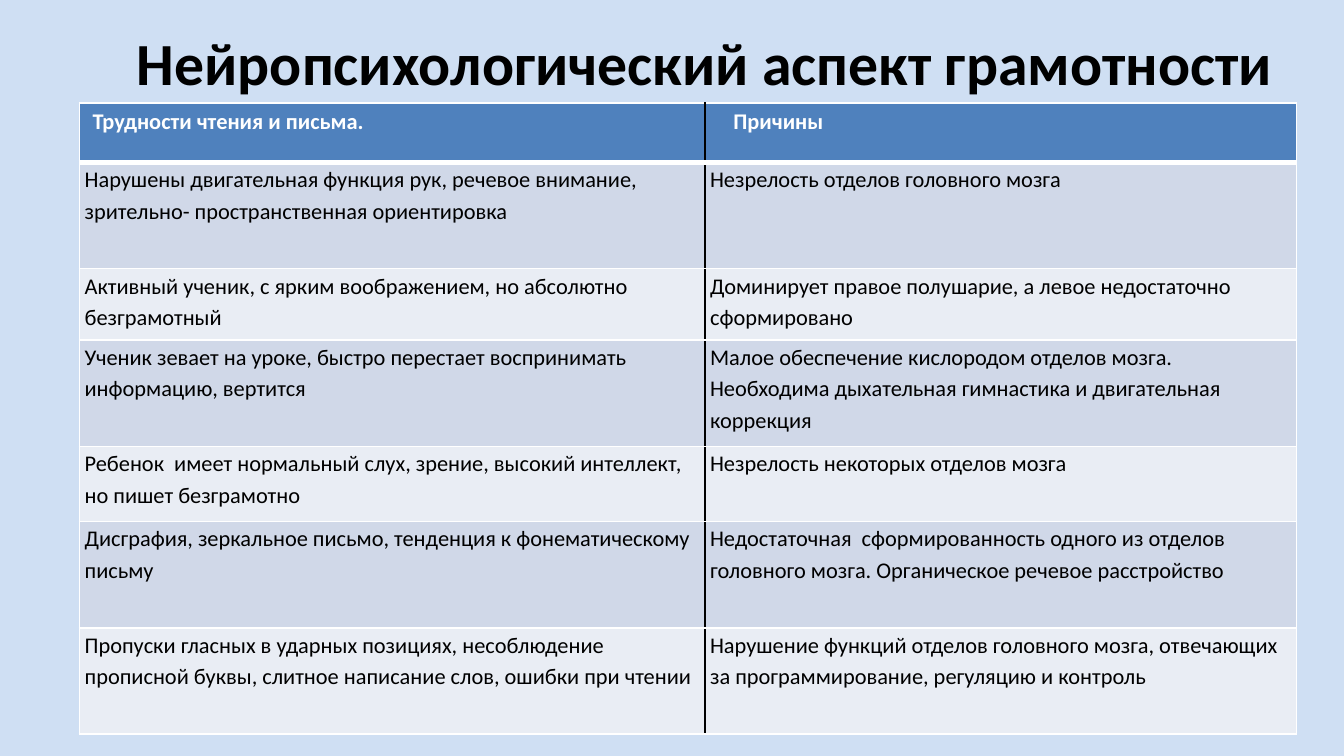
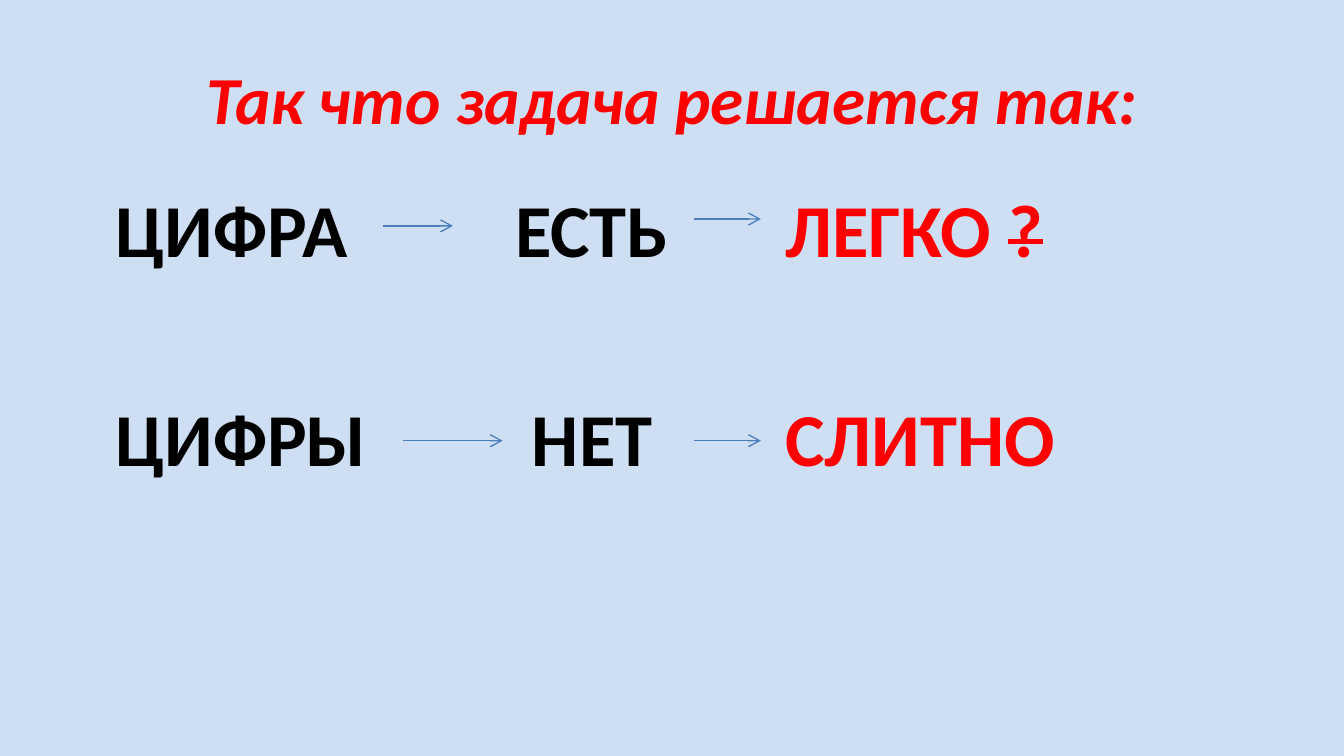
import dataclasses

import lxml.etree
import pptx
import pptx.dml.color
import pptx.enum.shapes
import pptx.enum.text
import pptx.oxml
import pptx.oxml.ns
import pptx.util

Cm, Pt = pptx.util.Cm, pptx.util.Pt
RGB = pptx.dml.color.RGBColor.from_string
qn = pptx.oxml.ns.qn


@dataclasses.dataclass(frozen=True)
class Theme:
    font: str = "Calibri"
    back: str = "CFDFF3"
    ink: str = "000000"
    light: str = "FFFFFF"
    accent: str = "FF0000"
    header: str = "4F81BD"
    bands: tuple = ("D0D8E8", "E9EDF4")
    arrow: str = "4B7EBC"
    title_size: int = 32
    answer_size: int = 36
    scheme_size: int = 40
    table_size: int = 12


theme = Theme()


def add_run(p, text, size, color, **formats):
    r = p.add_run()
    r.text = text
    r.font.color.rgb = RGB(color)
    for name, value in {"name": theme.font, "size": Pt(size), **formats}.items():
        setattr(r.font, name, value)
    return r


def place(sp, left, top, width, height, **frame):
    box = {"left": left, "top": top, "width": width, "height": height}
    for name, value in box.items():
        setattr(sp, name, Cm(value))
    tf = sp.text_frame
    formats = {"word_wrap": True, "auto_size": pptx.enum.text.MSO_AUTO_SIZE.NONE,
               **frame}
    for name, value in formats.items():
        setattr(tf, name, value)
    return tf


prs = pptx.Presentation()
prs.slide_width, prs.slide_height = Cm(25.4), Cm(14.29)
middle = pptx.enum.text.MSO_ANCHOR.MIDDLE
left_align = pptx.enum.text.PP_ALIGN.LEFT
center = pptx.enum.text.PP_ALIGN.CENTER

# Shared background
fill = prs.slide_master.background.fill
fill.solid()
fill.fore_color.rgb = RGB(theme.back)

# Slide 1: title
s = prs.slides.add_slide(prs.slide_layouts[5])
tf = place(s.shapes.title, 1.9, 0.27, 22.86, 1.8, vertical_anchor=middle)
p = tf.paragraphs[0]
p.alignment = center
add_run(p, "Нейропсихологический аспект грамотности", theme.title_size, theme.ink,
        bold=True)

# Slide 1: table of difficulties and causes
rows = [
    (1.12, "Трудности чтения и письма.", "Причины"),
    (2.01, "Нарушены двигательная функция рук, речевое внимание, "
           "зрительно- пространственная ориентировка",
     "Незрелость отделов головного мозга"),
    (1.35, "Активный ученик, с ярким воображением, но абсолютно безграмотный",
     "Доминирует правое полушарие, а левое недостаточно сформировано"),
    (2.01, "Ученик зевает на уроке, быстро перестает воспринимать "
           "информацию, вертится",
     "Малое обеспечение кислородом отделов мозга. Необходима "
     "дыхательная гимнастика и двигательная коррекция"),
    (1.42, "Ребенок  имеет нормальный слух, зрение, высокий интеллект, "
           "но пишет безграмотно",
     "Незрелость некоторых отделов мозга"),
    (2.01, "Дисграфия, зеркальное письмо, тенденция к фонематическому письму",
     "Недостаточная  сформированность одного из отделов головного мозга. "
     "Органическое речевое расстройство"),
    (2.01, "Пропуски гласных в ударных позициях, несоблюдение прописной "
           "буквы, слитное написание слов, ошибки при чтении",
     "Нарушение функций отделов головного мозга, отвечающих за "
     "программирование, регуляцию и контроль"),
]
widths = [11.82, 11.18]
table = s.shapes.add_table(len(rows), len(widths), Cm(1.5), Cm(1.95),
                           Cm(sum(widths)), Cm(sum(row[0] for row in rows))).table
table.first_row = table.horz_banding = False
for column, width in zip(table.columns, widths):
    column.width = Cm(width)

for i, (height, *texts) in enumerate(rows):
    table.rows[i].height = Cm(height)
    head = i == 0
    for j, text in enumerate(texts):
        cell = table.cell(i, j)
        side, edge = (0.25, 0.1) if head else (0.1, 0)
        margins = {"left": 0.54 if head and j else side, "right": side,
                   "top": edge, "bottom": edge}
        for name, value in margins.items():
            setattr(cell, "margin_" + name, Cm(value))

        # Black divider between the columns, thick rule under the header
        borders = {"lnL": (theme.ink if j else theme.light, 1),
                   "lnR": (theme.light if j else theme.ink, 1),
                   "lnT": (theme.light, 3 if i == 1 else 1),
                   "lnB": (theme.light, 3 if head else 1)}
        tcPr = cell._tc.get_or_add_tcPr()
        for tag, (color, weight) in borders.items():
            ln = lxml.etree.SubElement(tcPr, qn("a:" + tag), w=str(Pt(weight)))
            solid = lxml.etree.SubElement(ln, qn("a:solidFill"))
            lxml.etree.SubElement(solid, qn("a:srgbClr"), val=color)
        cell.fill.solid()
        cell.fill.fore_color.rgb = RGB(theme.header if head else theme.bands[(i - 1) % 2])

        p = cell.text_frame.paragraphs[0]
        if not head:
            p.line_spacing = 1.15
        add_run(p, text, theme.table_size, theme.light if head else theme.ink, bold=head)

# Slide 2: title
s = prs.slides.add_slide(prs.slide_layouts[1])
tf = place(s.shapes.title, 1.27, 0.58, 22.86, 2.39, vertical_anchor=middle,
           margin_top=Cm(0.27))
p = tf.paragraphs[0]
p.alignment = center
add_run(p, "Так что задача решается так:", theme.answer_size, theme.accent,
        bold=True, italic=True)

# Slide 2: condition, state and answer columns
body = s.placeholders[1]
state, answer = [s.shapes.add_textbox(0, 0, 0, 0) for _ in range(2)]
columns = [
    (body, 1.93, 5.6, left_align, theme.ink, ["ЦИФРА", "ЦИФРЫ"]),
    (state, 9.39, 3.6, center, theme.ink, ["ЕСТЬ", "НЕТ"]),
    (answer, 14.59, 9.54, left_align, theme.accent, ["ЛЕГКО ", "СЛИТНО"]),
]
for sp, left, width, align, color, words in columns:
    tf = place(sp, left, 3.33, width, 9.42)
    for i, word in enumerate(words):
        p = tf.add_paragraph() if i else tf.paragraphs[0]
        p.alignment = align
        p.space_before = Pt(64 if i else 0)
        pPr = p._p.get_or_add_pPr()
        for name in ("marL", "indent"):
            pPr.set(name, "0")
        lxml.etree.SubElement(pPr, qn("a:buNone"))
        add_run(p, word, theme.scheme_size, color, bold=True)

# Struck question mark after the first answer
r = add_run(answer.text_frame.paragraphs[0], "?", theme.scheme_size, theme.accent,
            bold=True)
r._r.get_or_add_rPr().set("strike", "sngStrike")

# Slide 2: arrows between the words
arrows = [(7.24, 8.56, 4.27), (13.11, 14.38, 4.14),
          (7.62, 9.5, 8.33), (13.11, 14.38, 8.33)]
for start, end, y in arrows:
    sp = s.shapes.add_connector(pptx.enum.shapes.MSO_CONNECTOR.STRAIGHT,
                                Cm(start), Cm(y), Cm(end), Cm(y))
    sp.line.color.rgb = RGB(theme.arrow)
    sp.line.width = Pt(0.75)
    lxml.etree.SubElement(sp.line._get_or_add_ln(), qn("a:tailEnd"), type="arrow")
    lxml.etree.SubElement(sp._element.spPr, qn("a:effectLst"))

prs.save("out.pptx")
